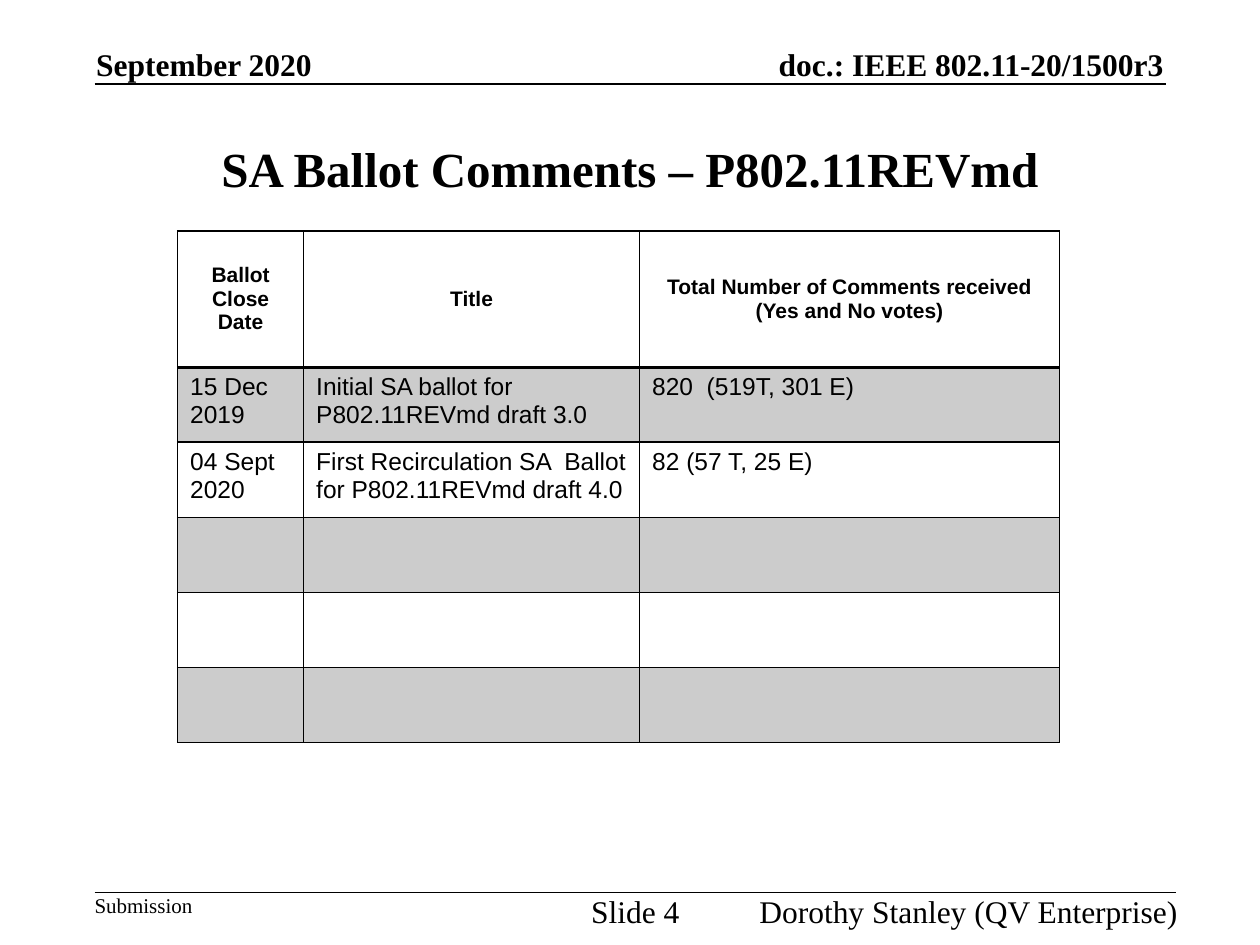
from dataclasses import dataclass

from lxml.etree import SubElement
from pptx import Presentation
from pptx.dml.color import RGBColor
from pptx.enum.shapes import MSO_CONNECTOR
from pptx.enum.text import MSO_ANCHOR, PP_ALIGN
from pptx.oxml.ns import qn
from pptx.util import Pt


@dataclass(frozen=True)
class Theme:
    ink: str = "000000"
    paper: str = "FFFFFF"
    band: str = "CCCCCC"
    serif: str = "Times New Roman"
    sans: str = "Arial"
    title: int = 28
    running: int = 18
    small: int = 12
    head: int = 12
    body: int = 14
    rule: int = 1
    heavy: int = 2


THEME = Theme()
LEFT, CENTER, RIGHT = PP_ALIGN.LEFT, PP_ALIGN.CENTER, PP_ALIGN.RIGHT
TOP, MIDDLE, BOTTOM = MSO_ANCHOR.TOP, MSO_ANCHOR.MIDDLE, MSO_ANCHOR.BOTTOM

COLUMNS = [72, 192, 240]
HEADINGS = ["Ballot Close Date", "Title",
            "Total Number of Comments received (Yes and No votes)"]
BALLOTS = [
    ["15 Dec 2019", "Initial SA ballot for P802.11REVmd draft 3.0",
     "820  (519T, 301 E)"],
    ["04 Sept 2020", "First Recirculation SA  Ballot for P802.11REVmd draft 4.0",
     "82 (57 T, 25 E)"],
]
EMPTY_ROWS = 3


def style(p, font, size, bold, align):
    p.alignment = align
    for r in p.runs:
        r.font.name = font
        r.font.size = Pt(size)
        r.font.bold = bold
        r.font.color.rgb = RGBColor.from_string(THEME.ink)


def add_label(s, box, text, size, bold=False, align=LEFT, anchor=TOP):
    sp = s.shapes.add_textbox(*map(Pt, box))
    tf = sp.text_frame
    tf.word_wrap = True
    tf.vertical_anchor = anchor
    tf.margin_left = tf.margin_right = tf.margin_top = tf.margin_bottom = 0
    tf.text = text
    style(tf.paragraphs[0], THEME.serif, size, bold, align)


def add_rule(s, left, y, width):
    line = s.shapes.add_connector(
        MSO_CONNECTOR.STRAIGHT, Pt(left), Pt(y), Pt(left + width), Pt(y))
    line.line.color.rgb = RGBColor.from_string(THEME.ink)
    line.line.width = Pt(THEME.rule)
    SubElement(line._element.spPr, qn("a:effectLst"))


def add_header(s, left, top, width, height):
    for text, x, w, align in [
        ("September 2020", left + 1, width / 2 - 60, LEFT),
        ("doc.: IEEE 802.11-20/1500r3", left + width / 2 - 60, width / 2 + 59, RIGHT),
    ]:
        add_label(s, (x, top, w, height), text, THEME.running, True, align, BOTTOM)
    add_rule(s, left, top + height + 0.5, width)


def add_footer(s, left, top, width, height):
    add_rule(s, left, top, width)
    for text, x, w, size, align in [
        ("Submission", 0, 120, THEME.small, LEFT),
        ("Slide 4", 268, 82, THEME.running, CENTER),
        ("Dorothy Stanley (QV Enterprise)", 360, width - 359, THEME.running, RIGHT),
    ]:
        add_label(s, (left + x, top, w, height), text, size, align=align)


def add_borders(cell, top, bottom):
    tc_pr = cell._tc.get_or_add_tcPr()
    widths = {"lnL": THEME.rule, "lnR": THEME.rule, "lnT": top, "lnB": bottom}
    for side, width in widths.items():
        ln = SubElement(tc_pr, qn(f"a:{side}"), w=str(Pt(width)))
        fill = SubElement(ln, qn("a:solidFill"))
        SubElement(fill, qn("a:srgbClr"), val=THEME.ink)


def add_ballot_table(s, left, top, head_height, row_height):
    rows = [HEADINGS] + BALLOTS + [[""] * len(COLUMNS)] * EMPTY_ROWS
    height = head_height + row_height * (len(rows) - 1)
    table = s.shapes.add_table(len(rows), len(COLUMNS), Pt(left), Pt(top),
                               Pt(sum(COLUMNS)), Pt(height)).table
    table.first_row = table.horz_banding = False
    for column, width in zip(table.columns, COLUMNS):
        column.width = Pt(width)
    for i, texts in enumerate(rows):
        is_head = i == 0
        table.rows[i].height = Pt(head_height if is_head else row_height)
        for cell, text in zip(table.rows[i].cells, texts):
            add_borders(cell, THEME.heavy if i == 1 else THEME.rule,
                        THEME.heavy if is_head else THEME.rule)
            cell.fill.solid()
            cell.fill.fore_color.rgb = RGBColor.from_string(
                THEME.band if i % 2 else THEME.paper)
            cell.vertical_anchor = MIDDLE if is_head else TOP
            cell.text_frame.text = text
            style(cell.text_frame.paragraphs[0], THEME.sans,
                  THEME.head if is_head else THEME.body, is_head,
                  CENTER if is_head else LEFT)


def main():
    prs = Presentation()
    prs.slide_width, prs.slide_height = Pt(720), Pt(540)
    s = prs.slides.add_slide(prs.slide_layouts[6])
    add_header(s, 54, 26, 612, 21.5)
    add_label(s, (54, 54, 612, 84), "SA Ballot Comments – P802.11REVmd",
              THEME.title, True, CENTER, MIDDLE)
    add_ballot_table(s, 101.5, 132, 77.8, 42.9)
    add_footer(s, 54, 510, 618, 22)
    prs.save("out.pptx")


if __name__ == "__main__":
    main()
